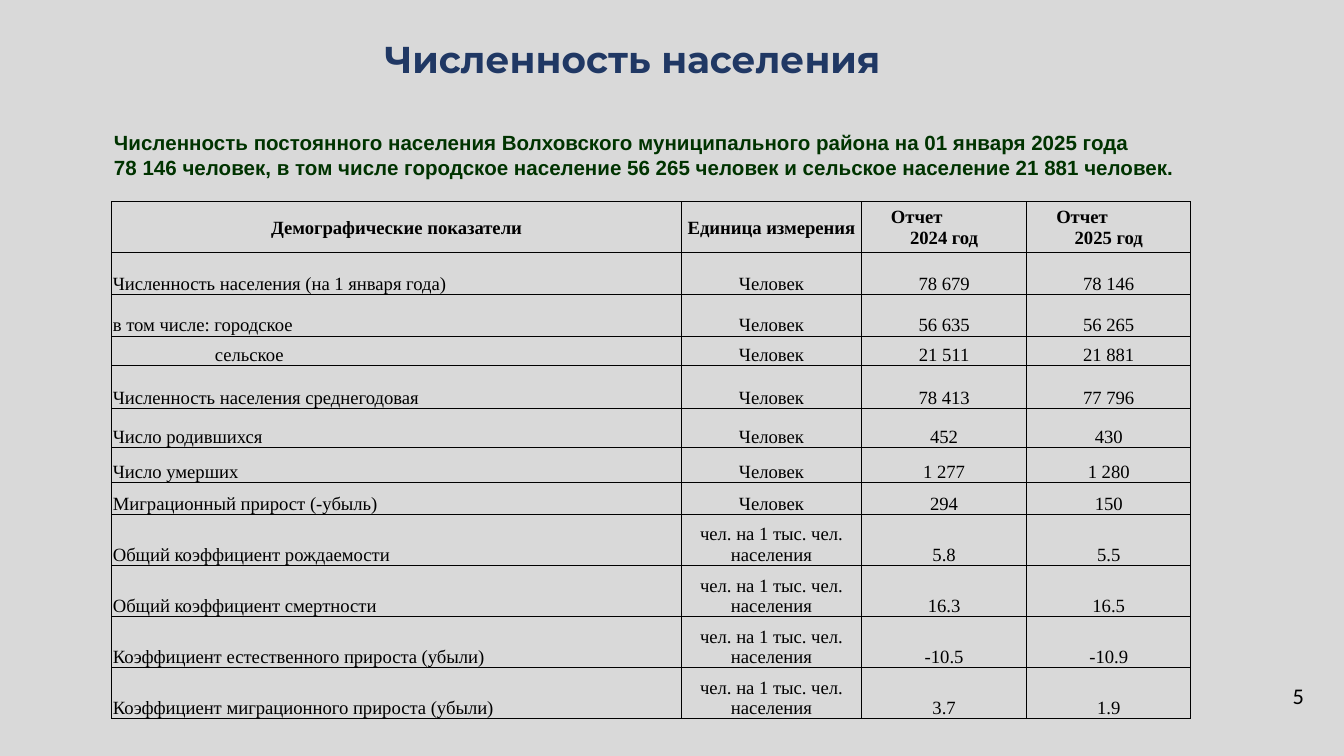
"""Build the slide on the population of the Volkhov district."""
from dataclasses import dataclass

from lxml.etree import SubElement
from pptx import Presentation
from pptx.dml.color import RGBColor as Color
from pptx.enum.text import MSO_ANCHOR as Anchor, MSO_AUTO_SIZE as AutoSize, PP_ALIGN as Align
from pptx.oxml import parse_xml
from pptx.oxml.ns import nsdecls, qn
from pptx.util import Inches, Pt


@dataclass(frozen=True)
class TextStyle:
    font: str
    size: float
    color: str
    bold: bool = False


@dataclass(frozen=True)
class Theme:
    background: str = "D9D9D9"
    outline: str = "3A6ABF"
    border: str = "000000"
    title: TextStyle = TextStyle("Montserrat", 20, "203864", True)
    summary: TextStyle = TextStyle("Arial", 11, "003300", True)
    header: TextStyle = TextStyle("Times New Roman", 10, "000000", True)
    body: TextStyle = TextStyle("Times New Roman", 10, "000000")
    number: TextStyle = TextStyle("Calibri", 12, "000000")


THEME = Theme()
PERSON = "Человек"
PER_THOUSAND = "чел. на 1 тыс. чел. населения"
SUMMARY = [
    "Численность постоянного населения Волховского муниципального района на 01 января 2025 года",
    "78 146 человек, в том числе городское население 56 265 человек и сельское население 21 881 человек.",
]
HEADERS = ["Демографические показатели", "Единица измерения", "Отчет\n2024 год", "Отчет\n2025 год"]
COLUMN_WIDTHS = [4.24, 1.34, 1.23, 1.22]
HEADER_HEIGHT = 0.38
RURAL = "сельское"
INDICATORS = [
    (0.31, "Численность населения (на 1 января года)", PERSON, "78 679", "78 146"),
    (0.31, "в том числе: городское", PERSON, "56 635", "56 265"),
    (0.22, RURAL, PERSON, "21 511", "21 881"),
    (0.32, "Численность населения среднегодовая", PERSON, "78 413", "77 796"),
    (0.29, "Число родившихся", PERSON, "452", "430"),
    (0.26, "Число умерших", PERSON, "1 277", "1 280"),
    (0.24, "Миграционный прирост (-убыль)", PERSON, "294", "150"),
    (0.38, "Общий коэффициент рождаемости", PER_THOUSAND, "5.8", "5.5"),
    (0.38, "Общий коэффициент смертности", PER_THOUSAND, "16.3", "16.5"),
    (0.38, "Коэффициент естественного прироста (убыли)", PER_THOUSAND, "-10.5", "-10.9"),
    (0.38, "Коэффициент миграционного прироста (убыли)", PER_THOUSAND, "3.7", "1.9"),
]


def write_lines(text_frame, lines, style, align):
    """Write each line as a paragraph with one styled run."""
    for index, line in enumerate(lines):
        paragraph = text_frame.add_paragraph() if index else text_frame.paragraphs[0]
        paragraph.alignment = align
        run = paragraph.add_run()
        run.text = line
        run.font.name = style.font
        run.font.size = Pt(style.size)
        run.font.bold = style.bold
        run.font.color.rgb = Color.from_string(style.color)


def indent(paragraph, inches):
    """Start a left-aligned paragraph at the given indent."""
    paragraph.alignment = Align.LEFT
    properties = paragraph._p.get_or_add_pPr()
    properties.set("marL", str(Inches(inches)))
    properties.set("indent", "0")


def add_title(slide, text):
    """Place the outlined title in the title placeholder."""
    title = slide.shapes.title
    title.left, title.top, title.width, title.height = map(Inches, (2.76, 0.22, 4.25, 0.44))
    title.text_frame.auto_size = AutoSize.NONE
    title.text_frame.vertical_anchor = Anchor.TOP
    write_lines(title.text_frame, [text], THEME.title, Align.LEFT)
    run = title.text_frame.paragraphs[0].runs[0]
    run._r.get_or_add_rPr().insert(0, parse_xml(
        f'<a:ln {nsdecls("a")} w="{Pt(0.83)}"><a:solidFill>'
        f'<a:srgbClr val="{THEME.outline}"/></a:solidFill></a:ln>'))


def add_text(slide, box, lines, style, align):
    """Add a wrapped text box."""
    text_frame = slide.shapes.add_textbox(*map(Inches, box)).text_frame
    text_frame.word_wrap = True
    write_lines(text_frame, lines, style, align)


def add_borders(cell):
    """Draw a thin line on all four sides of a cell."""
    properties = cell._tc.get_or_add_tcPr()
    for side in ("lnL", "lnR", "lnT", "lnB"):
        line = SubElement(properties, qn(f"a:{side}"), w=str(Pt(0.5)))
        fill = SubElement(line, qn("a:solidFill"))
        SubElement(fill, qn("a:srgbClr"), val=THEME.border)


def fill_cell(cell, text, style, align, anchor):
    """Write and format one table cell."""
    cell.margin_left = cell.margin_right = cell.margin_top = Inches(0.01)
    cell.margin_bottom = 0
    cell.vertical_anchor = anchor
    write_lines(cell.text_frame, text.split("\n"), style, align)
    add_borders(cell)
    cell.fill.background()


def add_indicator_table(slide):
    """Add the table of demographic indicators."""
    rows = [(HEADER_HEIGHT, *HEADERS), *INDICATORS]
    height = sum(row[0] for row in rows)
    table = slide.shapes.add_table(
        len(rows), len(HEADERS), Inches(0.83), Inches(1.5),
        Inches(sum(COLUMN_WIDTHS)), Inches(height)).table
    table.first_row = table.horz_banding = False
    for column, width in zip(table.columns, COLUMN_WIDTHS):
        column.width = Inches(width)
    for row_index, (row_height, *texts) in enumerate(rows):
        table.rows[row_index].height = Inches(row_height)
        is_header = row_index == 0
        style = THEME.header if is_header else THEME.body
        anchor = Anchor.MIDDLE if is_header else Anchor.BOTTOM
        for column_index, text in enumerate(texts):
            align = Align.CENTER if is_header or column_index else Align.LEFT
            cell = table.cell(row_index, column_index)
            fill_cell(cell, text, style, align, anchor)
            if "\n" in text:
                indent(cell.text_frame.paragraphs[0], 0.21)
            elif text == RURAL:
                indent(cell.text_frame.paragraphs[0], 0.76)


def main():
    """Build and save the presentation."""
    presentation = Presentation()
    presentation.slide_width = Inches(10)
    presentation.slide_height = presentation.slide_width * 9 // 16
    slide = presentation.slides.add_slide(presentation.slide_layouts[5])
    slide.background.fill.solid()
    slide.background.fill.fore_color.rgb = Color.from_string(THEME.background)
    add_title(slide, "Численность населения")
    add_text(slide, (9.49, 5.03, 0.31, 0.3), ["5"], THEME.number, Align.RIGHT)
    add_text(slide, (0.75, 0.92, 8.27, 0.47), SUMMARY, THEME.summary, Align.JUSTIFY)
    add_indicator_table(slide)
    presentation.save("out.pptx")


if __name__ == "__main__":
    main()
